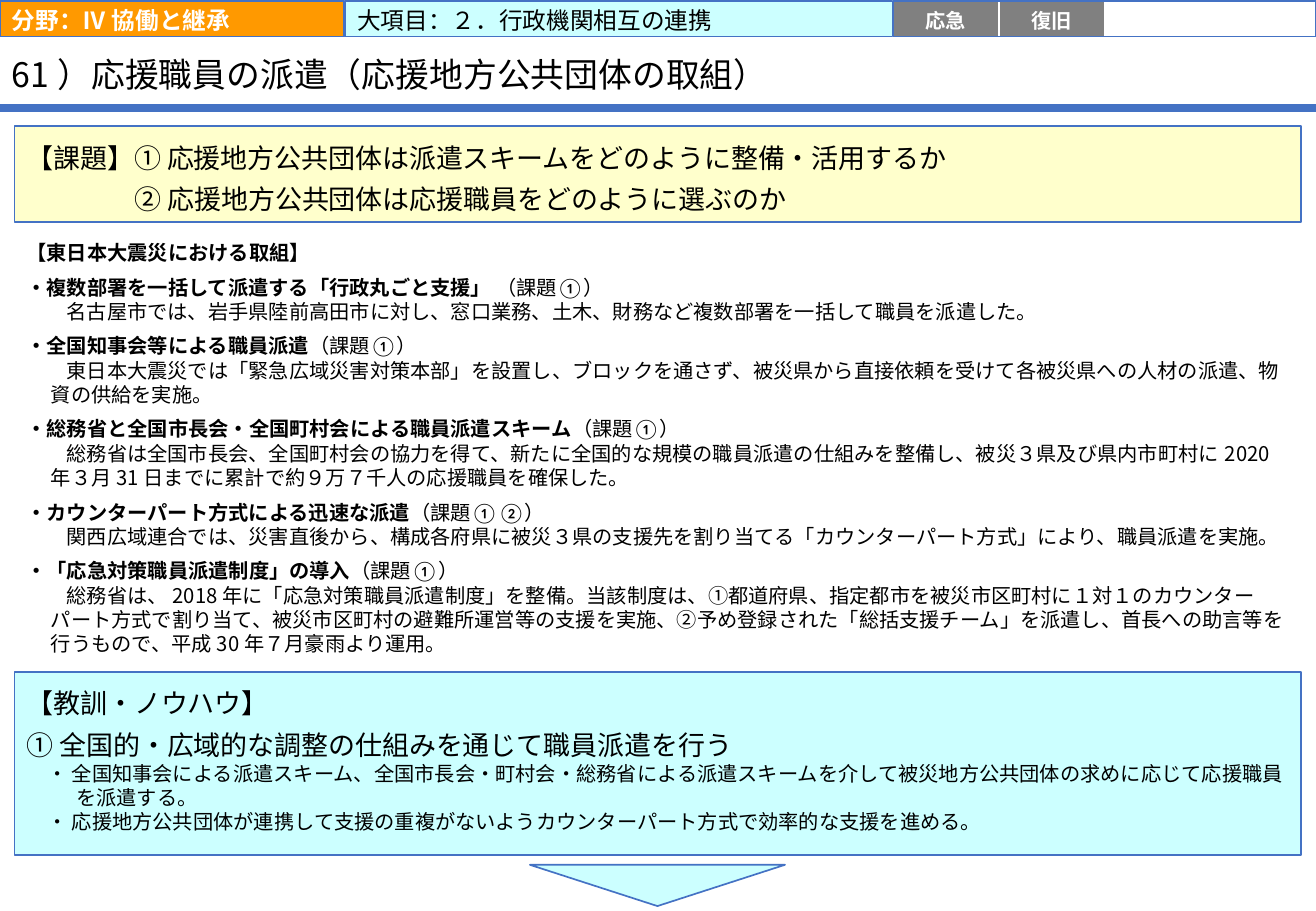
"""Build the slide on sending support staff to disaster areas."""
from dataclasses import dataclass

from lxml import etree
from pptx import Presentation
from pptx.dml.color import RGBColor
from pptx.enum import shapes, text
from pptx.oxml import ns
from pptx.util import Inches, Pt

WIDTH, HEIGHT = Inches(10.83), Inches(7.5)


@dataclass(frozen=True)
class Theme:
    """Colours, fonts and type sizes of the slide."""
    ink: str = "000000"
    white: str = "FFFFFF"
    blue: str = "4472C4"
    orange: str = "FF9900"
    aqua: str = "CCFFFF"
    cream: str = "FFFFCC"
    grey: str = "808080"
    label: str = "Calibri"
    body: str = "Noto Sans CJK JP"
    title_size: int = 20
    lead_size: int = 16
    header_size: int = 14
    body_size: int = 12


THEME = Theme()
MARGIN, PANEL_WIDTH = 1.11, 97.78
HEADER_TOP, HEADER_HEIGHT = 0.13, 3.87
PHASE_LEFT, PHASE_WIDTH = 67.87, 8.03

INITIATIVES = [
    ("・複数部署を一括して派遣する「行政丸ごと支援」", " （課題①）",
     "名古屋市では、岩手県陸前高田市に対し、窓口業務、土木、財務など複数部署を一括して職員を派遣した。"),
    ("・全国知事会等による職員派遣", "（課題①）",
     "東日本大震災では「緊急広域災害対策本部」を設置し、ブロックを通さず、被災県から直接依頼を受けて"
     "各被災県への人材の派遣、物資の供給を実施。"),
    ("・総務省と全国市長会・全国町村会による職員派遣スキーム", "（課題①）",
     "総務省は全国市長会、全国町村会の協力を得て、新たに全国的な規模の職員派遣の仕組みを整備し、"
     "被災３県及び県内市町村に2020年３月31日までに累計で約９万７千人の応援職員を確保した。"),
    ("・カウンターパート方式による迅速な派遣", "（課題①②）",
     "関西広域連合では、災害直後から、構成各府県に被災３県の支援先を割り当てる"
     "「カウンターパート方式」により、職員派遣を実施。"),
    ("・「応急対策職員派遣制度」の導入", "（課題①）",
     "総務省は、2018年に「応急対策職員派遣制度」を整備。当該制度は、①都道府県、指定都市を"
     "被災市区町村に１対１のカウンターパート方式で割り当て、被災市区町村の避難所運営等の支援を実施、"
     "②予め登録された「総括支援チーム」を派遣し、首長への助言等を行うもので、平成30年７月豪雨より運用。"),
]
LESSONS = [
    "・ 全国知事会による派遣スキーム、全国市長会・町村会・総務省による派遣スキームを介して"
    "被災地方公共団体の求めに応じて応援職員を派遣する。",
    "・ 応援地方公共団体が連携して支援の重複がないようカウンターパート方式で効率的な支援を進める。",
]


def place(left, top, width, height):
    """Turn percentages of the slide into lengths."""
    return [round(whole * share / 100) for whole, share in
            zip((WIDTH, HEIGHT, WIDTH, HEIGHT), (left, top, width, height))]


def set_frame(frame, insets, anchor):
    """Set wrapping, anchor and insets, and return the frame."""
    frame.word_wrap = True
    frame.vertical_anchor = anchor
    (frame.margin_left, frame.margin_top,
     frame.margin_right, frame.margin_bottom) = map(Inches, insets)
    return frame


def add_panel(slide, area, fill=None, line=None, kind=shapes.MSO_SHAPE.RECTANGLE,
              insets=(0.1, 0.05, 0.1, 0.05), anchor=text.MSO_ANCHOR.MIDDLE):
    """Add a filled or outlined shape and return it."""
    panel = slide.shapes.add_shape(kind, *place(*area))
    panel.shadow.inherit = False
    if fill:
        panel.fill.solid()
        panel.fill.fore_color.rgb = RGBColor.from_string(fill)
    else:
        panel.fill.background()
    if line:
        panel.line.color.rgb = RGBColor.from_string(line)
        panel.line.width = Pt(1)
    else:
        panel.line.fill.background()
    set_frame(panel.text_frame, insets, anchor)
    return panel


def write(frame, *wording, size=THEME.body_size, font=THEME.body, color=THEME.ink,
          bold=False, align=text.PP_ALIGN.LEFT, before=0, spacing=None, margin=0, indent=0):
    """Add a paragraph whose first piece alone may be bold."""
    paragraph = frame.add_paragraph() if frame.text else frame.paragraphs[0]
    paragraph.alignment = align
    paragraph.space_before = Pt(before)
    if spacing:
        paragraph.line_spacing = spacing
    properties = paragraph._p.get_or_add_pPr()
    properties.set("marL", str(Inches(margin)))
    properties.set("indent", str(Inches(indent)))
    for order, piece in enumerate(wording):
        run = paragraph.add_run()
        run.text = piece
        run.font.size = Pt(size)
        run.font.name = font
        run.font.bold = bold and order == 0
        run.font.color.rgb = RGBColor.from_string(color)
        east_asian = etree.SubElement(run.font._element, ns.qn("a:ea"))
        east_asian.set("typeface", font)


def add_rule(slide, top):
    """Draw the thick line under the title."""
    left, height, width, _ = place(0, top, 100, 0)
    rule = slide.shapes.add_connector(shapes.MSO_CONNECTOR.STRAIGHT, left, height, width, height)
    rule.line.color.rgb = RGBColor.from_string(THEME.blue)
    rule.line.width = Pt(4.5)
    etree.SubElement(rule._element.spPr, ns.qn("a:effectLst"))


def add_header(slide):
    """Add the field, the topic and the row of phases."""
    for left, width, fill, color, bold, wording in (
            (0, 26.13, THEME.orange, THEME.white, True, "分野：Ⅳ 協働と継承"),
            (26.22, 41.83, THEME.aqua, THEME.ink, False, "大項目：２．行政機関相互の連携")):
        heading = add_panel(slide, (left, HEADER_TOP, width, HEADER_HEIGHT), fill, THEME.blue,
                            insets=(0.1, 0.02, 0.1, 0))
        write(heading.text_frame, wording, size=THEME.header_size, font=THEME.label,
              color=color, bold=bold)
    phases = ("応急", "復旧", "", "")
    for column, phase in enumerate(phases):
        area = (PHASE_LEFT + column * PHASE_WIDTH, HEADER_TOP, PHASE_WIDTH, HEADER_HEIGHT)
        cell = add_panel(slide, area, THEME.grey if phase else THEME.white, THEME.white,
                         insets=(0, 0.02, 0, 0))
        if phase:
            write(cell.text_frame, phase, font=THEME.label, color=THEME.white, bold=True,
                  align=text.PP_ALIGN.CENTER)
    add_panel(slide, (PHASE_LEFT, HEADER_TOP, len(phases) * PHASE_WIDTH, HEADER_HEIGHT),
              line=THEME.blue)


def add_title(slide):
    """Add the title and its rule."""
    add_rule(slide, 11.87)
    title = slide.shapes.add_textbox(*place(0, 4.27, 87.53, 7.73))
    frame = set_frame(title.text_frame, (0.1, 0.04, 0.1, 0), text.MSO_ANCHOR.MIDDLE)
    write(frame, "61）応援職員の派遣（応援地方公共団体の取組）", size=THEME.title_size, spacing=0.9)


def add_issues(slide):
    """Add the panel with the two issues."""
    issues = add_panel(slide, (MARGIN, 13.87, PANEL_WIDTH, 10.53), THEME.cream, THEME.blue,
                       insets=(0.1, 0.12, 0.1, 0.12)).text_frame
    for wording, margin in (
            ("【課題】① 応援地方公共団体は派遣スキームをどのように整備・活用するか", 0),
            ("② 応援地方公共団体は応援職員をどのように選ぶのか", 0.89)):
        write(issues, wording, size=THEME.lead_size, spacing=Pt(24), margin=margin)


def add_initiatives(slide):
    """Add the initiatives taken after the earthquake."""
    initiatives = add_panel(slide, (MARGIN, 25.73, PANEL_WIDTH, 46.93), THEME.white).text_frame
    write(initiatives, "【東日本大震災における取組】", font=THEME.label, bold=True)
    for heading, issue, detail in INITIATIVES:
        write(initiatives, heading, issue, font=THEME.label, bold=True, before=6)
        write(initiatives, detail, margin=0.2, indent=0.13)


def add_lessons(slide):
    """Add the lessons and the arrow leading on from them."""
    lessons = add_panel(slide, (MARGIN, 73.73, PANEL_WIDTH, 20.13), THEME.aqua, THEME.blue,
                        insets=(0.1, 0.12, 0.1, 0), anchor=text.MSO_ANCHOR.TOP).text_frame
    write(lessons, "【教訓・ノウハウ】", size=THEME.lead_size)
    write(lessons, "① 全国的・広域的な調整の仕組みを通じて職員派遣を行う", size=THEME.lead_size, before=6)
    for lesson in LESSONS:
        write(lessons, lesson, margin=0.41, indent=-0.24)
    onward = add_panel(slide, (40.26, 94.93, 19.39, 4.53), THEME.aqua, THEME.blue,
                       kind=shapes.MSO_SHAPE.ISOSCELES_TRIANGLE)
    onward.rotation = 180


def main():
    """Build and save the slide."""
    deck = Presentation()
    deck.slide_width, deck.slide_height = WIDTH, HEIGHT
    slide = deck.slides.add_slide(deck.slide_layouts[6])
    add_title(slide)
    add_header(slide)
    add_issues(slide)
    add_initiatives(slide)
    add_lessons(slide)
    deck.save("out.pptx")


if __name__ == "__main__":
    main()
